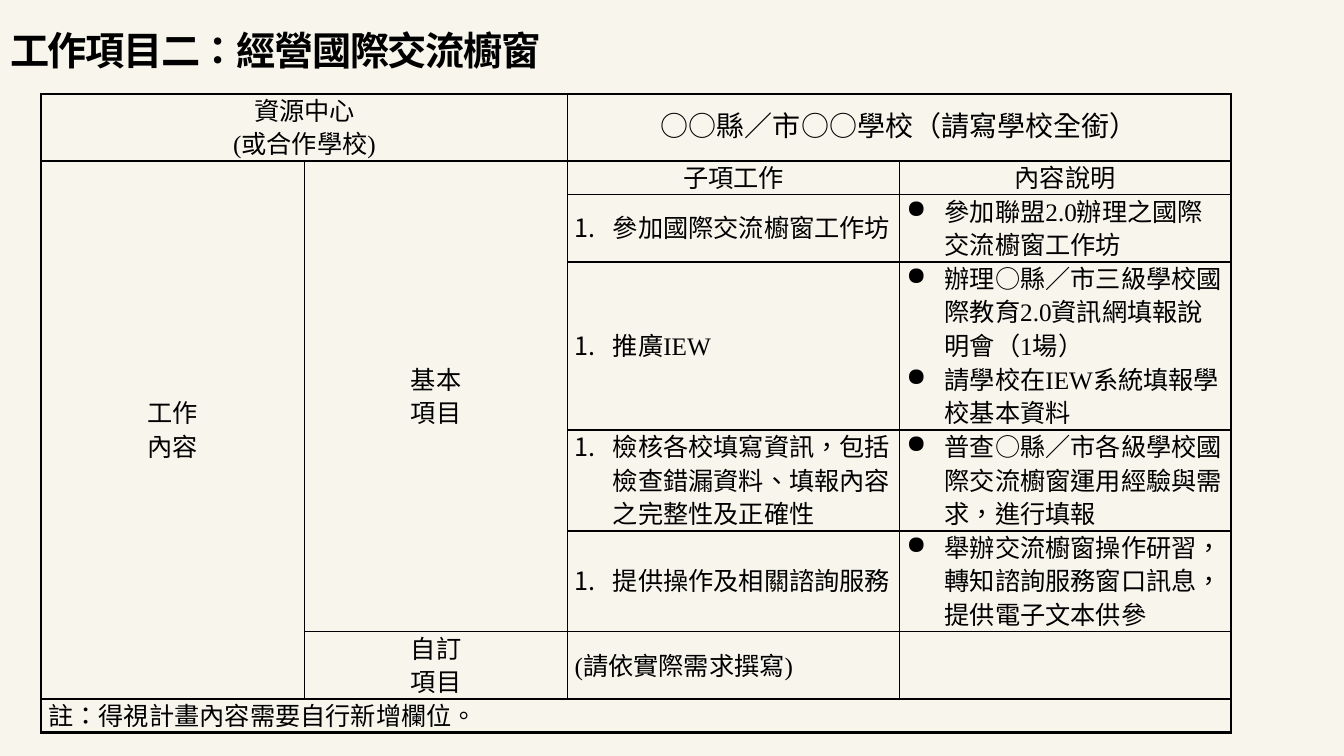
from dataclasses import dataclass

from lxml.etree import SubElement
from pptx import Presentation
from pptx.dml.color import RGBColor
from pptx.enum.text import MSO_ANCHOR as Anchor, MSO_AUTO_SIZE as AutoSize, PP_ALIGN as Align
from pptx.oxml.ns import qn
from pptx.util import Inches, Pt


@dataclass(frozen=True)
class Theme:
    """Colours, fonts and sizes of the deck."""
    paper: str = "F8F5ED"
    ink: str = "000000"
    title_font: str = "Calibri"
    table_font: str = "Times New Roman"
    title_size: int = 28
    school_size: int = 20
    body_size: int = 18
    line_pitch: int = 24
    inner_line: float = 1
    outer_line: float = 1.5
    bottom_line: float = 2.25


THEME = Theme()
INDENT = Inches(0.38)
COLUMN_WIDTHS = (2.61, 2.61, 3.29, 3.29)
LINES_PER_ROW = (2, 1, 2, 5, 3, 3, 2, 1)
MERGES = (((0, 0), (0, 1)), ((0, 2), (0, 3)), ((1, 0), (6, 0)),
          ((1, 1), (5, 1)), ((7, 0), (7, 3)))
TASKS = (
    ("參加國際交流櫥窗工作坊", ["參加聯盟2.0辦理之國際交流櫥窗工作坊"]),
    ("推廣IEW", ["辦理○縣／市三級學校國際教育2.0資訊網填報說明會（1場）",
               "請學校在IEW系統填報學校基本資料"]),
    ("檢核各校填寫資訊，包括檢查錯漏資料、填報內容之完整性及正確性",
     ["普查○縣／市各級學校國際交流櫥窗運用經驗與需求，進行填報"]),
    ("提供操作及相關諮詢服務",
     ["舉辦交流櫥窗操作研習，轉知諮詢服務窗口訊息，提供電子文本供參"]),
)


def style_span(span, font, size, bold=False):
    """Format one run of Traditional Chinese text."""
    span.font.name = font
    span.font.size = Pt(size)
    span.font.bold = bold
    span.font.color.rgb = RGBColor.from_string(THEME.ink)
    span._r.get_or_add_rPr().set("lang", "zh-TW")


def add_marker(para, tag, **attributes):
    """Give a paragraph a hanging bullet or number."""
    properties = para._p.get_or_add_pPr()
    properties.set("marL", str(INDENT))
    properties.set("indent", str(-INDENT))
    SubElement(properties, qn(tag), **attributes)


def write_cell(cell, lines, align=Align.LEFT, size=THEME.body_size, margin=0.07, marker=None):
    """Fill a table cell with one paragraph per line."""
    cell.margin_left = cell.margin_right = Inches(margin)
    cell.text_frame.text = "\n".join(lines)
    for para in cell.text_frame.paragraphs:
        para.alignment = align
        para.line_spacing = Pt(THEME.line_pitch)
        if marker:
            add_marker(para, **marker)
        for span in para.runs:
            style_span(span, THEME.table_font, size)


def draw_borders(cell, widths):
    """Draw the left, right, top and bottom borders of a cell."""
    properties = cell._tc.get_or_add_tcPr()
    for position, (side, width) in enumerate(widths.items()):
        line = properties.makeelement(qn(f"a:ln{side}"), {"w": str(Pt(width))})
        fill = SubElement(line, qn("a:solidFill"))
        SubElement(fill, qn("a:srgbClr"), val=THEME.ink)
        properties.insert(position, line)


def frame_table(table):
    """Clear the fills, set the margins and rule every cell by its place."""
    last_row, last_column = len(table.rows) - 1, len(table.columns) - 1
    for row in range(last_row + 1):
        for column in range(last_column + 1):
            cell = table.cell(row, column)
            cell.fill.background()
            cell.margin_top = cell.margin_bottom = 0
            cell.vertical_anchor = Anchor.MIDDLE
            draw_borders(cell, {
                "L": THEME.inner_line if column else THEME.outer_line,
                "R": THEME.outer_line if column == last_column else THEME.inner_line,
                "T": THEME.inner_line if row else THEME.outer_line,
                "B": THEME.bottom_line if row == last_row else THEME.inner_line,
            })


def add_title(page, text, left, top, width, height):
    """Place the page title in its placeholder."""
    title = page.shapes.title
    title.left, title.top, title.width, title.height = map(Inches, (left, top, width, height))
    frame = title.text_frame
    frame.text = text
    frame.word_wrap = True
    frame.auto_size = AutoSize.NONE
    frame.vertical_anchor = Anchor.TOP
    para = frame.paragraphs[0]
    para.alignment = Align.LEFT
    para.line_spacing = 0.9
    para.space_before = Pt(10)
    span = para.runs[0]
    style_span(span, THEME.title_font, THEME.title_size, bold=True)
    span._r.get_or_add_rPr().set("spc", "-100")


def add_work_table(page, left, top):
    """Build the table of work items from its top left corner."""
    heights = [Pt(THEME.line_pitch * lines) for lines in LINES_PER_ROW]
    table = page.shapes.add_table(
        len(heights), len(COLUMN_WIDTHS), Inches(left), Inches(top),
        Inches(sum(COLUMN_WIDTHS)), sum(heights)).table
    table.first_row = table.horz_banding = False
    for column, width in zip(table.columns, COLUMN_WIDTHS):
        column.width = Inches(width)
    for row, height in zip(table.rows, heights):
        row.height = height
    frame_table(table)
    for start, end in MERGES:
        table.cell(*start).merge(table.cell(*end))

    centre = Align.CENTER
    write_cell(table.cell(0, 0), ["資源中心", "(或合作學校)"], centre)
    write_cell(table.cell(0, 2), ["○○縣／市○○學校（請寫學校全銜）"], centre, THEME.school_size)
    write_cell(table.cell(1, 0), ["工作", "內容"], centre)
    write_cell(table.cell(1, 1), ["基本", "項目"], centre, margin=0.01)
    write_cell(table.cell(1, 2), ["子項工作"], centre)
    write_cell(table.cell(1, 3), ["內容說明"], centre)
    for row, (task, details) in enumerate(TASKS, start=2):
        write_cell(table.cell(row, 2), [task],
                   marker={"tag": "a:buAutoNum", "type": "arabicPeriod"})
        write_cell(table.cell(row, 3), details, marker={"tag": "a:buChar", "char": "●"})
    write_cell(table.cell(6, 1), ["自訂", "項目"], centre, margin=0.01)
    write_cell(table.cell(6, 2), ["(請依實際需求撰寫)"])
    write_cell(table.cell(7, 0), ["註：得視計畫內容需要自行新增欄位。"], Align.JUSTIFY)


def main():
    """Build and save the deck."""
    deck = Presentation()
    deck.slide_width, deck.slide_height = Inches(13.33), Inches(7.5)
    page = deck.slides.add_slide(deck.slide_layouts[5])
    page.background.fill.solid()
    page.background.fill.fore_color.rgb = RGBColor.from_string(THEME.paper)
    add_title(page, "工作項目二：經營國際交流櫥窗", 0, 0.26, 7.88, 1.61)
    add_work_table(page, 0.41, 0.93)
    deck.save("out.pptx")


if __name__ == "__main__":
    main()
